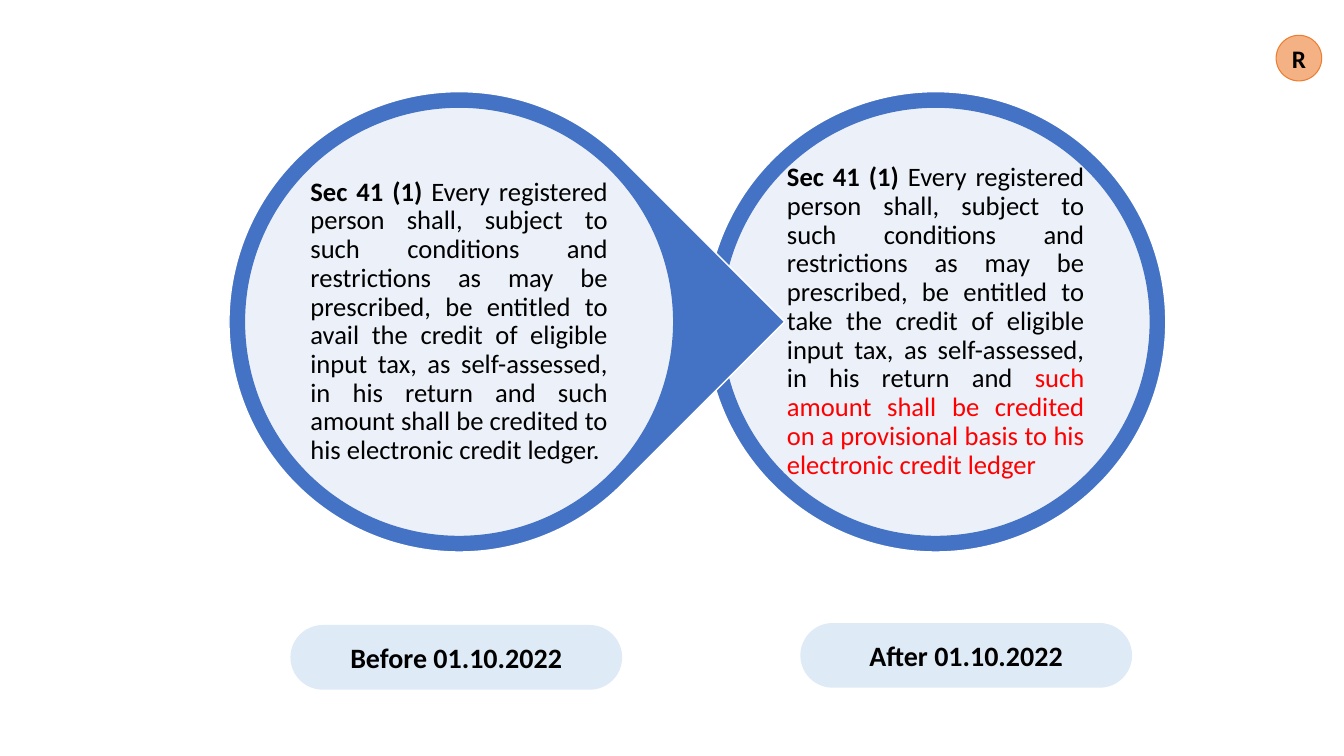
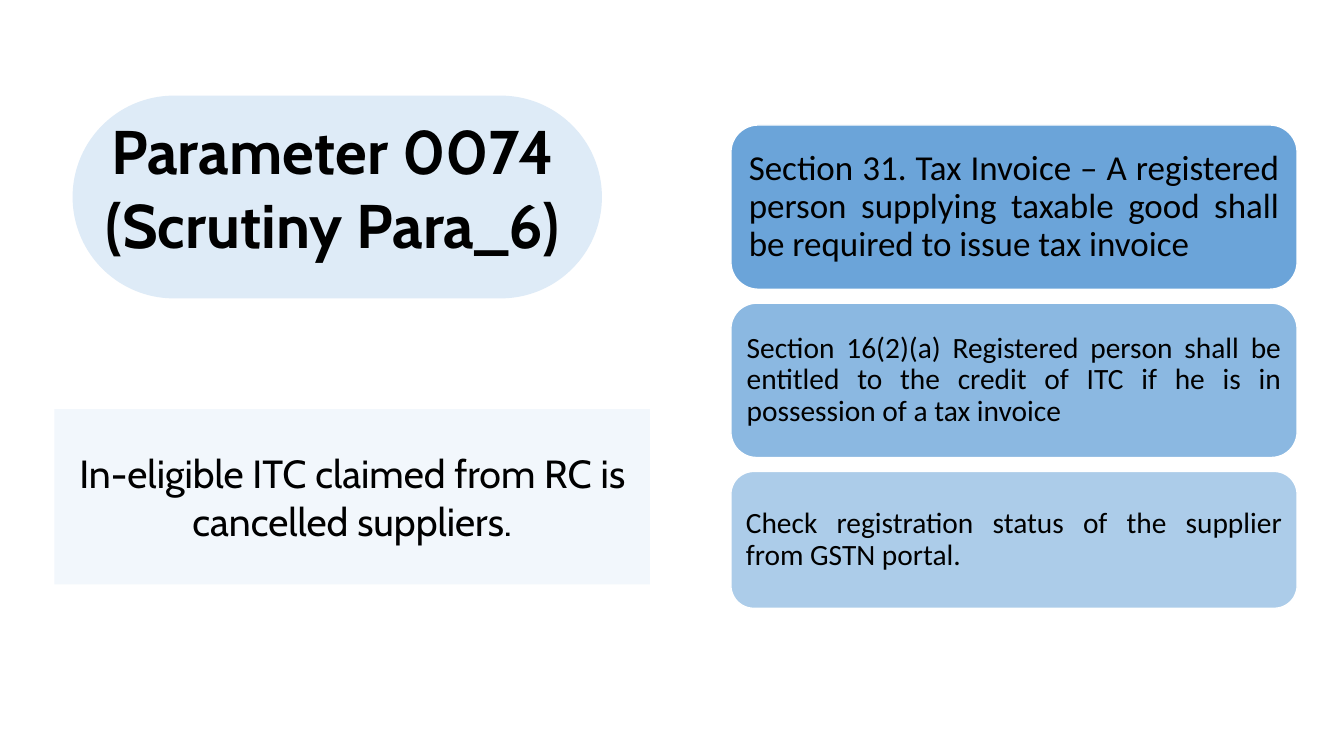
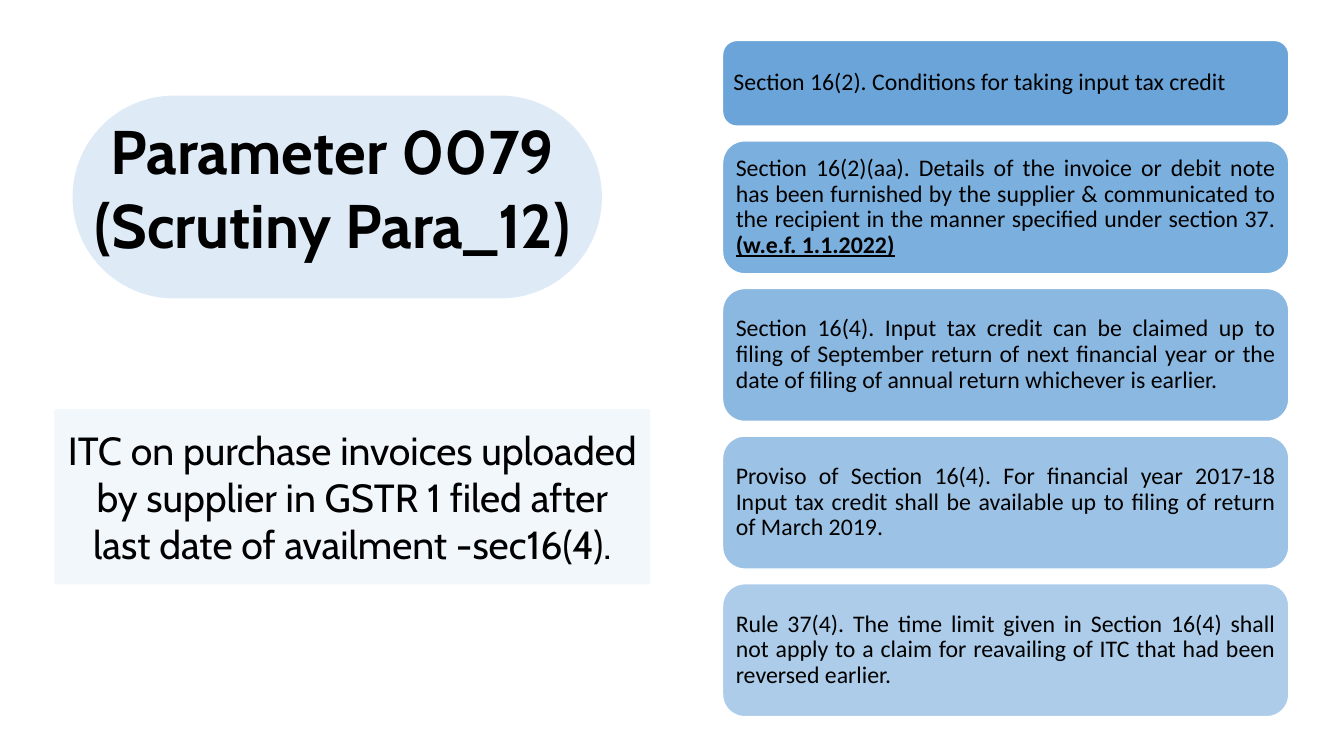
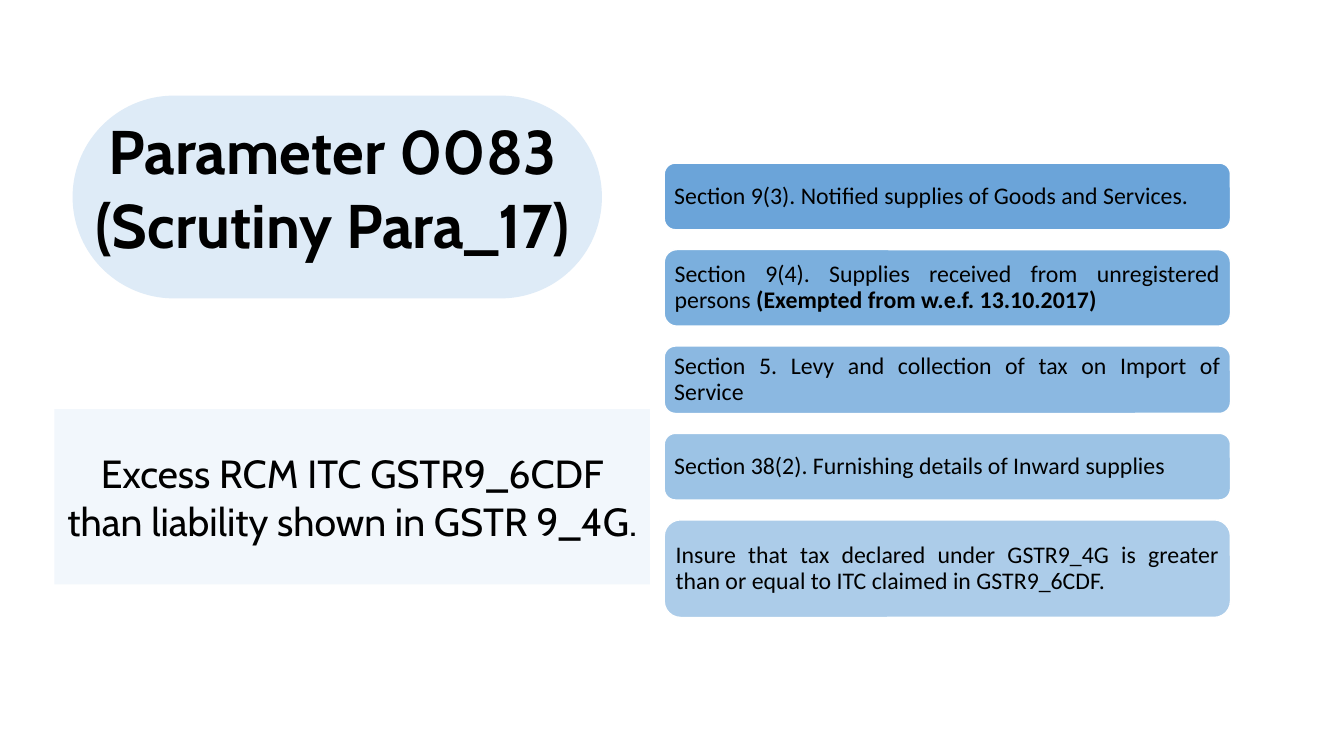
from lxml.etree import SubElement
from pptx import Presentation
from pptx.dml.color import RGBColor
from pptx.enum.shapes import MSO_SHAPE
from pptx.enum.text import MSO_ANCHOR, PP_ALIGN
from pptx.oxml.ns import qn
from pptx.util import Cm, Pt

# Shared look
BLACK, WHITE, RED = "000000", "FFFFFF", "FF0000"
RING, CARD = "4472C4", "5B9BD5"
PILL, PANEL = "DEEBF7", "F2F7FC"
BADGE, BADGE_EDGE = "F4B183", "ED7D31"
BODY_FONT, HEAD_FONT = "Calibri", "Cabin"
BOLD = {"bold": True}
JUSTIFIED = {"alignment": PP_ALIGN.JUSTIFY, "line_spacing": 0.9}
CENTRED = {"alignment": PP_ALIGN.CENTER}


def rgb(code):
    return RGBColor.from_string(code)


def apply(target, values):
    for name, value in values.items():
        setattr(target, name, value)


def write(shape, runs, size, layout, inset=0.33, font=BODY_FONT, wrap=True):
    """Fill a shape with one paragraph of (text, font values) runs."""
    frame = shape.text_frame
    margins = {f"margin_{side}": Cm(inset) for side in ("left", "top", "right", "bottom")}
    apply(frame, {"word_wrap": wrap, "vertical_anchor": MSO_ANCHOR.MIDDLE, **margins})
    paragraph = frame.paragraphs[0]
    apply(paragraph, layout)
    for text, changes in runs:
        run = paragraph.add_run()
        run.text = text
        values = {"name": font, "size": Pt(size), "bold": False, **changes}
        colour = values.pop("colour", BLACK)
        apply(run.font, values)
        run.font.color.rgb = rgb(colour)


def draw(slide, kind, box, fill, edge=None, weight=1, opacity=100, corner=None):
    shape = slide.shapes.add_shape(kind, *map(Cm, box))
    shape.shadow.inherit = False
    shape.fill.solid()
    shape.fill.fore_color.rgb = rgb(fill)
    if opacity < 100:
        colour = shape.fill._xPr.find(qn("a:solidFill"))[0]
        SubElement(colour, qn("a:alpha"), val=str(opacity * 1000))
    if edge:
        shape.line.color.rgb = rgb(edge)
        shape.line.width = Pt(weight)
    else:
        shape.line.fill.background()
    if corner is not None:
        shape.adjustments[0] = corner
    return shape


def pill(slide, box):
    return draw(slide, MSO_SHAPE.ROUNDED_RECTANGLE, box, PILL, corner=0.5)


# Comparison slide
def provision(slide, box, kind, turn, runs):
    """A ring with a pale disc that holds the legal text."""
    left, top, width, height = box
    ring = draw(slide, kind, box, RING, WHITE)
    ring.rotation = turn
    rim = 0.39
    disc_box = (left + rim, top + rim, width - 2 * rim, height - 2 * rim)
    disc = draw(slide, MSO_SHAPE.OVAL, disc_box, WHITE, RING, opacity=90)
    write(disc, runs, 19, JUSTIFIED, inset=0.08)


def date_label(slide, box, text):
    write(pill(slide, box), [(text, BOLD)], 20, CENTRED, inset=0.25)


def comparison_slide(slide):
    opening = (" Every registered person shall, subject to such conditions and restrictions "
               "as may be prescribed, be entitled to {} the credit of eligible input tax, "
               "as self-assessed, in his return and ")
    section = ("Sec 41 (1)", BOLD)
    after = [section, (opening.format("take"), {}),
             ("such amount shall be credited on a provisional basis to his "
              "electronic credit ledger", {"colour": RED})]
    before = [section, (opening.format("avail") + "such amount shall be credited to his "
                        "electronic credit ledger.", {})]
    provision(slide, (17.78, 2.31, 11.6, 11.6), MSO_SHAPE.OVAL, 0, after)
    provision(slide, (5.77, 2.31, 11.6, 11.6), MSO_SHAPE.TEAR, 45, before)
    date_label(slide, (7.32, 15.75, 8.36, 1.63), "Before 01.10.2022")
    date_label(slide, (20.17, 15.7, 8.36, 1.63), "After 01.10.2022")
    badge = draw(slide, MSO_SHAPE.OVAL, (32.16, 0.89, 1.15, 1.15), BADGE, BADGE_EDGE, 0.75)
    write(badge, [("R", BOLD)], 18, CENTRED, inset=0, wrap=False)


# Parameter slides
def heading(slide, box, text):
    left, top, width, height = box
    pill(slide, box)
    title = slide.shapes.add_textbox(Cm(left - 1.58), Cm(top + 0.77),
                                     Cm(width + 2.94), Cm(height - 2.04))
    write(title, [(text, BOLD)], 44, CENTRED, font=HEAD_FONT)


def issue(slide, box, text):
    panel = draw(slide, MSO_SHAPE.RECTANGLE, box, PANEL)
    write(panel, [(text, {})], 28, CENTRED, font=HEAD_FONT)


def card_stack(slide, box, gap, cards):
    """Cards under each other, fading evenly from 90 to 50 percent."""
    left, top, width = box
    fade = 40 // (len(cards) - 1)
    for index, (height, size, runs) in enumerate(cards):
        card = draw(slide, MSO_SHAPE.ROUNDED_RECTANGLE, (left, top, width, height),
                    CARD, WHITE, opacity=90 - index * fade)
        write(card, runs, size, JUSTIFIED, inset=size / 100)
        top += height + gap


def parameter_slide(slide, title, finding, corner, gap, cards):
    heading(slide, (1.83, 2.41, 13.34, 5.11), title)
    issue(slide, (1.37, 10.31, 15.01, 4.42), finding)
    card_stack(slide, (*corner, 14.27), gap, cards)


# Title, finding, top left of the cards, gap, cards as (height, size, runs)
PARAMETERS = [
    ("Parameter 0074 (Scrutiny Para_6)",
     "In-eligible ITC claimed from RC is cancelled suppliers.",
     (18.42, 3.15), 0.35, [
         (4.14, 25, [("Section 31. Tax Invoice – A registered person supplying taxable good "
                      "shall be required to issue tax invoice", {})]),
         (3.89, 21, [("Section 16(2)(a) Registered person shall be entitled to the credit "
                      "of ITC if he is in possession of a tax invoice", {})]),
         (3.45, 21, [("Check registration status of the supplier from GSTN portal.", {})]),
     ]),
    ("Parameter 0079 (Scrutiny Para_12)",
     "ITC on purchase invoices uploaded by supplier in GSTR 1 filed after last date of "
     "availment -sec16(4).",
     (18.21, 1.02), 0.37, [
         (2.16, 17, [("Section 16(2). Conditions for taking input tax credit", {})]),
         (3.35, 17, [("Section 16(2)(aa). Details of the invoice or debit note has been "
                      "furnished by the supplier & communicated to the recipient in the "
                      "manner specified under section 37. ", {}),
                     ("(w.e.f. 1.1.2022)", {"bold": True, "underline": True})]),
         (3.35, 17, [("Section 16(4). Input tax credit can be claimed up to filing of "
                      "September return of next financial year or the date of filing of "
                      "annual return whichever is earlier.", {})]),
         (3.35, 17, [("Proviso of Section 16(4). For financial year 2017-18 Input tax credit "
                      "shall be available up to filing of return of March 2019.", {})]),
         (3.35, 17, [("Rule 37(4). The time limit given in Section 16(4) shall not apply to "
                      "a claim for reavailing of ITC that had been reversed earlier.", {})]),
     ]),
    ("Parameter 0083 (Scrutiny Para_17)",
     "Excess RCM ITC GSTR9_6CDF than liability shown in GSTR 9_4G.",
     (16.74, 4.11), 0.5, [
         (1.68, 17, [("Section 9(3). Notified supplies of Goods and Services.", {})]),
         (1.93, 17, [("Section 9(4). Supplies received from unregistered persons ", {}),
                     ("(Exempted from w.e.f. 13.10.2017)", BOLD)]),
         (1.7, 17, [("Section 5. Levy and collection of tax on Import of Service", {})]),
         (1.68, 17, [("Section 38(2). Furnishing details of Inward supplies", {})]),
         (2.46, 17, [("Insure that tax declared under GSTR9_4G is greater than or equal to "
                      "ITC claimed in GSTR9_6CDF.", {})]),
     ]),
]


def main():
    deck = Presentation()
    apply(deck, {"slide_width": Cm(33.87), "slide_height": Cm(19.05)})
    blank = deck.slide_layouts[6]
    comparison_slide(deck.slides.add_slide(blank))
    for content in PARAMETERS:
        parameter_slide(deck.slides.add_slide(blank), *content)
    deck.save("out.pptx")


if __name__ == "__main__":
    main()
